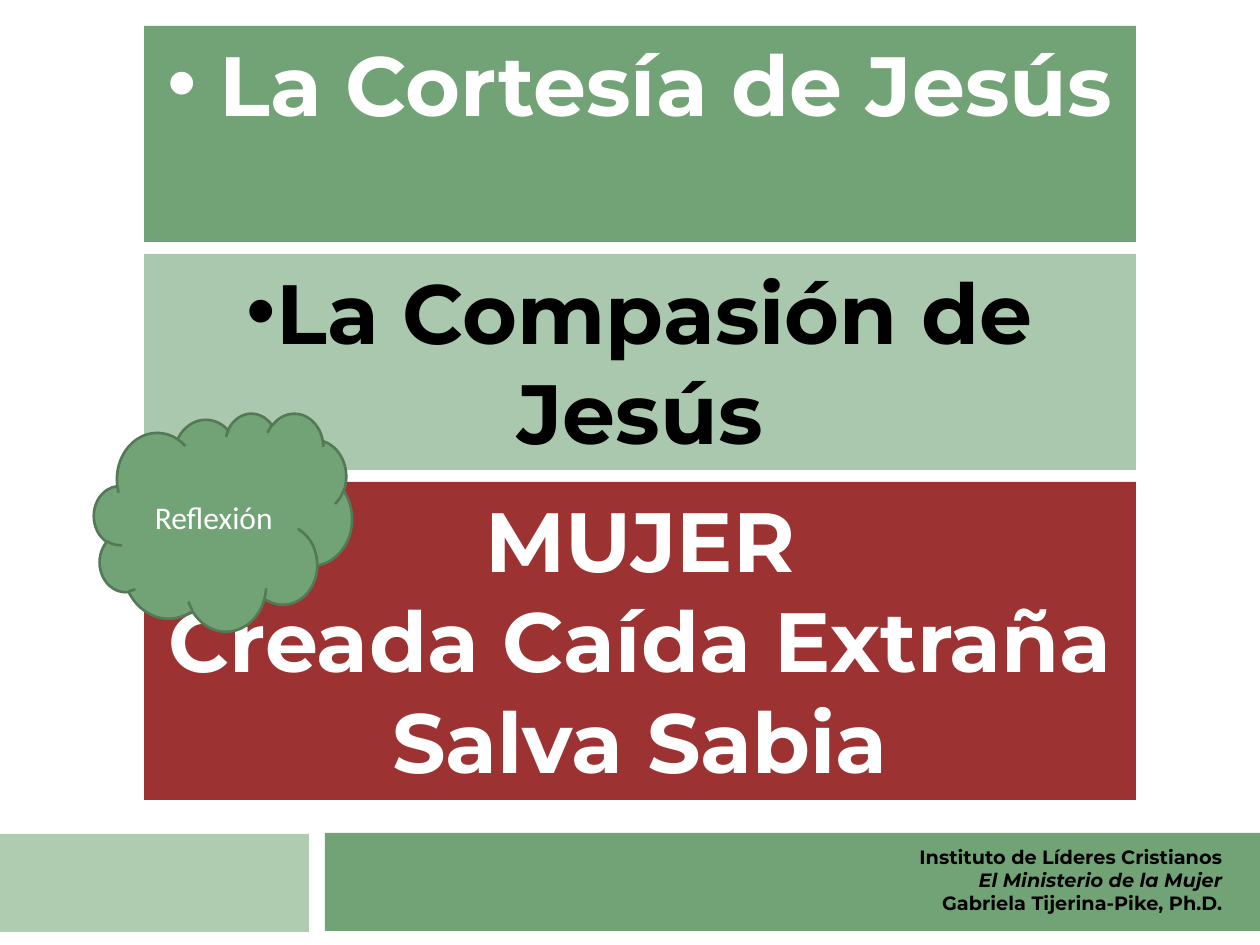
from lxml.etree import SubElement
from pptx import Presentation
from pptx.dml.color import RGBColor
from pptx.enum.shapes import MSO_SHAPE
from pptx.enum.text import MSO_ANCHOR, MSO_AUTO_SIZE, PP_ALIGN
from pptx.oxml.ns import qn
from pptx.util import Emu, Inches, Pt

PX = 914400 / 126
GREEN, WHITE, BLACK = "72A376", "FFFFFF", "000000"

# Content: panels are (height, fill, text colour, bulleted, paragraphs of runs)
PANELS = [
    (216, GREEN, WHITE, True, [[(" ", {}), ("La Cortesía de Jesús", {"bold": True})]]),
    (216, "AAC8AD", BLACK, True, [[("La Compasión de Jesús", {"bold": True})]]),
    (318, "9D3232", WHITE, False, [[("MUJER", {"bold": True})],
                                  [("Creada Caída Extraña Salva Sabia", {"bold": True})]]),
]
PANEL_LEFT, PANEL_TOP, PANEL_WIDTH, PANEL_GAP = 144, 26, 992, 12
CREDITS = [
    [("Instituto de Líderes Cristianos", {"bold": True})],
    [("El Ministerio de la Mujer", {"bold": True, "italic": True})],
    [("Gabriela Tijerina-Pike, Ph.D.", {"bold": True})],
]
CREDITS_BOX = (203, 839, 1032, 83)
FOOTER_BARS = [((-1, 834, 310, 98), "B0CCB0"), ((325, 833, 935, 98), GREEN)]
REFLECTION, CLOUD_BOX = "Reflexión", (94, 413, 258, 218)


def rgb(value):
    return RGBColor.from_string(value)


def px(*lengths):
    return [Emu(round(length * PX)) for length in lengths]


def add_block(slide, box, fill, preset=MSO_SHAPE.RECTANGLE):
    block = slide.shapes.add_shape(preset, *px(*box))
    block.shadow.inherit = False
    block.fill.solid()
    block.fill.fore_color.rgb = rgb(fill)
    block.line.fill.background()
    return block


def write(frame, paragraphs, size, color, font="Montserrat",
          align=PP_ALIGN.CENTER, anchor=MSO_ANCHOR.TOP, bulleted=False):
    frame_format = {"word_wrap": True, "auto_size": MSO_AUTO_SIZE.NONE,
                    "vertical_anchor": anchor}
    for name, value in frame_format.items():
        setattr(frame, name, value)
    for index, runs in enumerate(paragraphs):
        paragraph = frame.paragraphs[0] if index == 0 else frame.add_paragraph()
        paragraph.alignment = align
        if bulleted:
            properties = paragraph._p.get_or_add_pPr()
            SubElement(properties, qn("a:buFont")).set("typeface", "Arial")
            SubElement(properties, qn("a:buChar")).set("char", "•")
        for text, style in runs:
            run = paragraph.add_run()
            run.text = text
            run_format = {"name": font, "size": Pt(size), "bold": False, "italic": False}
            for name, value in (run_format | style).items():
                setattr(run.font, name, value)
            run.font.color.rgb = rgb(color)


presentation = Presentation()
presentation.slide_width, presentation.slide_height = Inches(10), Inches(7.5)
slide = presentation.slides.add_slide(presentation.slide_layouts[5])

# Footer bars and credits
for box, fill in FOOTER_BARS:
    add_block(slide, box, fill)
credits = slide.shapes.add_textbox(*px(*CREDITS_BOX))
write(credits.text_frame, CREDITS, 11, BLACK, align=PP_ALIGN.RIGHT)

# Stacked panels; the first one is the slide title
top = PANEL_TOP
for index, (height, fill, color, bulleted, paragraphs) in enumerate(PANELS):
    box = (PANEL_LEFT, top, PANEL_WIDTH, height)
    if index == 0:
        panel = slide.shapes.title
        panel.left, panel.top, panel.width, panel.height = px(*box)
        panel.fill.solid()
        panel.fill.fore_color.rgb = rgb(fill)
    else:
        panel = add_block(slide, box, fill)
    write(panel.text_frame, paragraphs, 48, color, bulleted=bulleted)
    top += height + PANEL_GAP

# Reflection cloud
cloud = add_block(slide, CLOUD_BOX, GREEN, MSO_SHAPE.CLOUD)
cloud.line.color.rgb = rgb("547957")
cloud.line.width = Pt(1.5)
write(cloud.text_frame, [[(REFLECTION, {})]], 18, WHITE, font="Calibri",
      anchor=MSO_ANCHOR.MIDDLE)

presentation.save("out.pptx")
